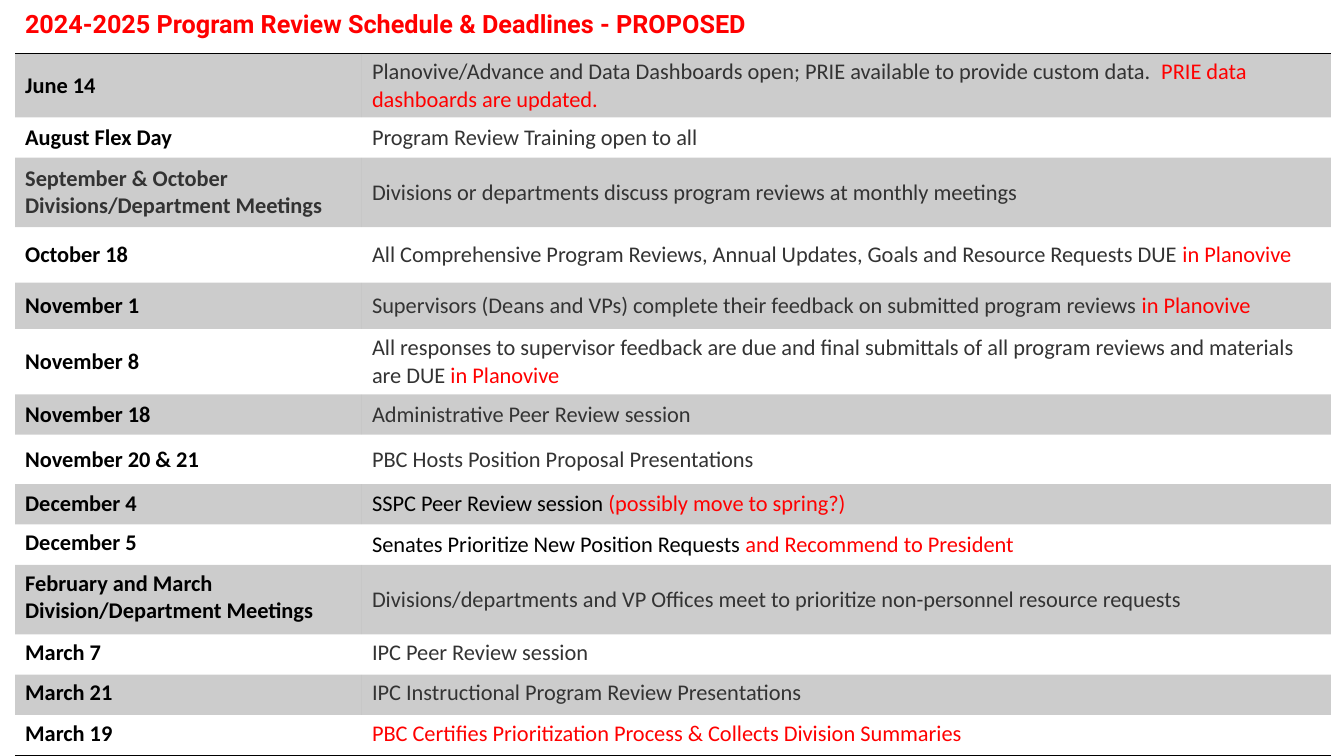
from lxml import etree
from pptx import Presentation
from pptx.dml.color import RGBColor
from pptx.enum.text import MSO_ANCHOR
from pptx.oxml.ns import qn
from pptx.util import Pt

PX = 9144  # 100 px to the inch
TOP, MIDDLE = MSO_ANCHOR.TOP, MSO_ANCHOR.MIDDLE
COLORS = {"black": "000000", "gray": "333333", "red": "FF0000"}
BAND_ALPHA = "20000"
NO_STYLE_NO_GRID = "{2D5ABB26-0587-4C30-8999-92F81FD0307C}"
COLUMN_WIDTHS = (344, 961)

# height, date, date colour, date anchor, task anchor, task runs
SCHEDULE = [
    (56, "June 14", "black", MIDDLE, MIDDLE,
     [("Planovive/Advance and Data Dashboards open; PRIE available to provide custom data.  ", "gray"),
      ("PRIE data dashboards are updated.", "red")]),
    (40, "August Flex Day", "black", MIDDLE, MIDDLE,
     [("Program Review Training open to all", "gray")]),
    (69, "September & October Divisions/Department Meetings", "gray", MIDDLE, MIDDLE,
     [("Divisions or departments discuss program reviews at monthly meetings", "gray")]),
    (55, "October 18", "black", MIDDLE, MIDDLE,
     [("All Comprehensive Program Reviews, Annual Updates, Goals and Resource Requests DUE ", "gray"),
      ("in Planovive", "red")]),
    (46, "November 1", "black", MIDDLE, MIDDLE,
     [("Supervisors (Deans and VPs) complete their feedback on submitted program reviews ", "gray"),
      ("in Planovive", "red")]),
    (65, "November 8", "black", MIDDLE, MIDDLE,
     [("All responses to supervisor feedback are due and final submittals of all program reviews "
       "and materials are DUE ", "gray"),
      ("in Planovive", "red")]),
    (40, "November 18", "black", MIDDLE, MIDDLE,
     [("Administrative Peer Review session", "gray")]),
    (49, "November 20 & 21", "black", MIDDLE, MIDDLE,
     [("PBC Hosts Position Proposal Presentations", "gray")]),
    (40, "December 4", "black", MIDDLE, MIDDLE,
     [("SSPC Peer Review session ", "black"), ("(possibly move to spring?)", "red")]),
    (40, "December 5", "black", TOP, MIDDLE,
     [("Senates Prioritize New Position Requests ", "black"), ("and Recommend to President", "red")]),
    (69, "February and March Division/Department Meetings", "black", TOP, MIDDLE,
     [("Divisions/departments and VP Offices meet to prioritize non-personnel resource requests", "gray")]),
    (40, "March 7", "black", TOP, TOP,
     [("IPC Peer Review session", "gray")]),
    (40, "March 21", "black", TOP, TOP,
     [("IPC Instructional Program Review Presentations", "gray")]),
    (40, "March 19", "black", TOP, TOP,
     [("PBC Certifies Prioritization Process & Collects Division Summaries", "red")]),
]


def add_text(paragraph, text, color, bold=False, size=16, font="Calibri"):
    run = paragraph.add_run()
    run.text = text
    run.font.name = font
    run.font.size = Pt(size)
    run.font.bold = bold
    run.font.color.rgb = RGBColor.from_string(COLORS[color])


def add_border(cell, side):
    """Draw a 1 pt black line on one side, named as in lnT or lnB."""
    line = etree.Element(qn("a:" + side), w=str(Pt(1)))
    fill = etree.SubElement(line, qn("a:solidFill"))
    etree.SubElement(fill, qn("a:srgbClr"), val=COLORS["black"])
    cell._tc.get_or_add_tcPr().insert(0, line)


presentation = Presentation()
presentation.slide_width = 1333 * PX
presentation.slide_height = 750 * PX
slide = presentation.slides.add_slide(presentation.slide_layouts[6])

title = slide.shapes.add_textbox(15 * PX, -27 * PX, 920 * PX, 101 * PX)
title.text_frame.word_wrap = True
title.text_frame.vertical_anchor = MIDDLE
add_text(title.text_frame.paragraphs[0], "2024-2025 Program Review Schedule & Deadlines - PROPOSED",
         "red", bold=True, size=18, font="Roboto")

table_height = sum(entry[0] for entry in SCHEDULE)
table_frame = slide.shapes.add_table(len(SCHEDULE), len(COLUMN_WIDTHS), 15 * PX, 53 * PX,
                                     sum(COLUMN_WIDTHS) * PX, table_height * PX)
table = table_frame.table
table.first_row = False
table.horz_banding = False
table._tbl.tblPr.find(qn("a:tableStyleId")).text = NO_STYLE_NO_GRID
for column, width in zip(table.columns, COLUMN_WIDTHS):
    column.width = width * PX

for index, (height, date, date_color, date_anchor, task_anchor, task_runs) in enumerate(SCHEDULE):
    row = table.rows[index]
    row.height = height * PX
    date_cell, task_cell = row.cells
    date_cell.vertical_anchor = date_anchor
    task_cell.vertical_anchor = task_anchor
    add_text(date_cell.text_frame.paragraphs[0], date, date_color, bold=True)
    for text, color in task_runs:
        add_text(task_cell.text_frame.paragraphs[0], text, color)

    for cell in (date_cell, task_cell):
        if index % 2 == 0:
            cell.fill.solid()
            cell.fill.fore_color.rgb = RGBColor.from_string(COLORS["black"])
            band_color = cell._tc.tcPr.find(qn("a:solidFill"))[0]
            etree.SubElement(band_color, qn("a:alpha"), val=BAND_ALPHA)
        else:
            cell.fill.background()
        if index == 0:
            add_border(cell, "lnT")
        if index == len(SCHEDULE) - 1:
            add_border(cell, "lnB")

presentation.save("out.pptx")
